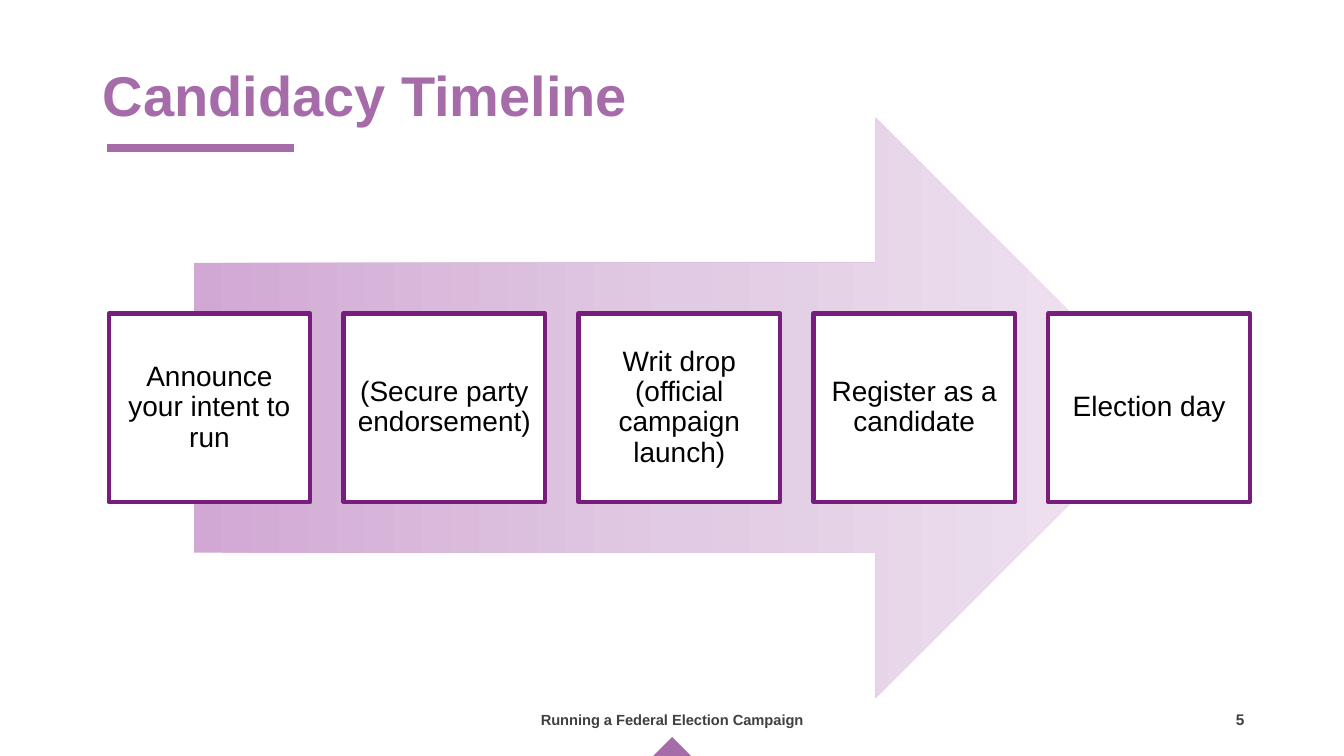
from copy import deepcopy
from lxml.etree import SubElement
from pptx import Presentation
from pptx.dml.color import RGBColor
from pptx.enum.shapes import MSO_CONNECTOR, MSO_SHAPE
from pptx.enum.text import MSO_ANCHOR, PP_ALIGN
from pptx.oxml.ns import qn
from pptx.util import Cm, Pt

TITLE = "Candidacy Timeline"
STEPS = [
    "Announce your intent to run",
    "(Secure party endorsement)",
    "Writ drop (official campaign launch)",
    "Register as a candidate",
    "Election day",
]
FOOTER = "Running a Federal Election Campaign"
PAGE_NUMBER = "5"
COLORS = {
    "accent": "A66BA9",
    "border": "781D7D",
    "white": "FFFFFF",
    "text": "000000",
    "footer": "404040",
}
ARROW_STOPS = [(0, "D1A8D4"), (0.5, "E1CAE3"), (1, "F0E5F1")]
FONT = "Arial"

STEP_LEFT, STEP_TOP, STEP_WIDTH, STEP_HEIGHT = 2.74, 7.9, 5.08, 4.75
STEP_PITCH = 5.92
STEP_INSET = 0.2


def rgb(name):
    return RGBColor.from_string(COLORS[name])


def write(shape, text, size, color, bold=False, align=PP_ALIGN.CENTER,
          anchor=MSO_ANCHOR.MIDDLE, spacing=1.0):
    frame = shape.text_frame
    frame.word_wrap = True
    frame.vertical_anchor = anchor
    frame.text = text
    paragraph = frame.paragraphs[0]
    paragraph.alignment = align
    paragraph.line_spacing = spacing
    paragraph.font.name = FONT
    paragraph.font.size = Pt(size)
    paragraph.font.bold = bold
    paragraph.font.color.rgb = rgb(color)


def add_label(slide, box, text, size, color, **style):
    label = slide.shapes.add_textbox(*map(Cm, box))
    write(label, text, size, color, bold=True, **style)


def add_plain_shape(slide, preset, box):
    shape = slide.shapes.add_shape(preset, *map(Cm, box))
    shape.shadow.inherit = False
    shape.line.fill.background()
    return shape


def add_arrow(slide):
    arrow = add_plain_shape(slide, MSO_SHAPE.RIGHT_ARROW, (4.88, 2.97, 24.49, 14.61))
    arrow.fill.gradient()
    arrow.fill.gradient_angle = 0
    first_stop = arrow._element.spPr.find(".//" + qn("a:gs"))
    first_stop.addnext(deepcopy(first_stop))
    for stop, (position, color) in zip(arrow.fill.gradient_stops, ARROW_STOPS):
        stop.position = position
        stop.color.rgb = RGBColor.from_string(color)


def add_step(slide, index, text):
    left = STEP_LEFT + index * STEP_PITCH
    step = add_plain_shape(slide, MSO_SHAPE.RECTANGLE,
                           (left, STEP_TOP, STEP_WIDTH, STEP_HEIGHT))
    step.fill.solid()
    step.fill.fore_color.rgb = rgb("white")
    step.line.color.rgb = rgb("border")
    step.line.width = Pt(3)
    frame = step.text_frame
    frame.margin_left = frame.margin_right = Cm(STEP_INSET)
    frame.margin_top = frame.margin_bottom = Cm(STEP_INSET)
    write(step, text, 20, "text", spacing=0.9)


def add_underline(slide):
    underline = slide.shapes.add_connector(
        MSO_CONNECTOR.STRAIGHT, Cm(2.7), Cm(3.73), Cm(7.42), Cm(3.73))
    underline.line.color.rgb = rgb("accent")
    underline.line.width = Pt(6)
    SubElement(underline._element.spPr, qn("a:effectLst"))


def main():
    presentation = Presentation()
    presentation.slide_width = Cm(33.87)
    presentation.slide_height = Cm(19.05)
    slide = presentation.slides.add_slide(presentation.slide_layouts[6])

    add_label(slide, (30.1, 17.78, 2.31, 0.74), PAGE_NUMBER, 11, "footer",
              anchor=MSO_ANCHOR.TOP)
    add_label(slide, (11.23, 17.63, 11.43, 1.02), FOOTER, 10.5, "footer")
    marker = add_plain_shape(slide, MSO_SHAPE.ISOSCELES_TRIANGLE,
                             (16.43, 18.57, 1.02, 0.51))
    marker.fill.solid()
    marker.fill.fore_color.rgb = rgb("accent")
    add_underline(slide)
    add_label(slide, (2.34, 1.02, 29.21, 2.92), TITLE, 40, "accent",
              align=PP_ALIGN.LEFT, spacing=0.9)

    add_arrow(slide)
    for index, text in enumerate(STEPS):
        add_step(slide, index, text)

    presentation.save("out.pptx")


if __name__ == "__main__":
    main()
